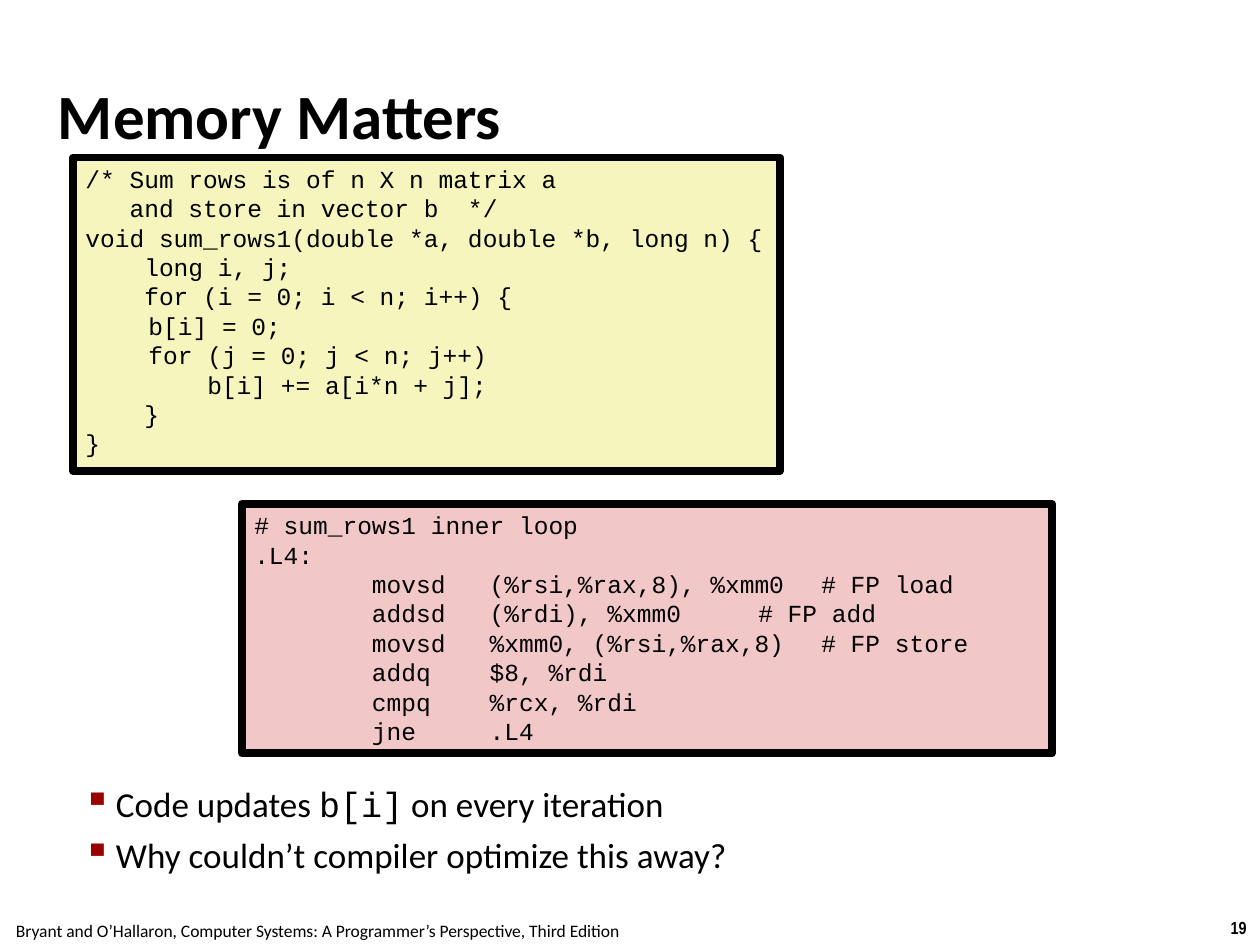
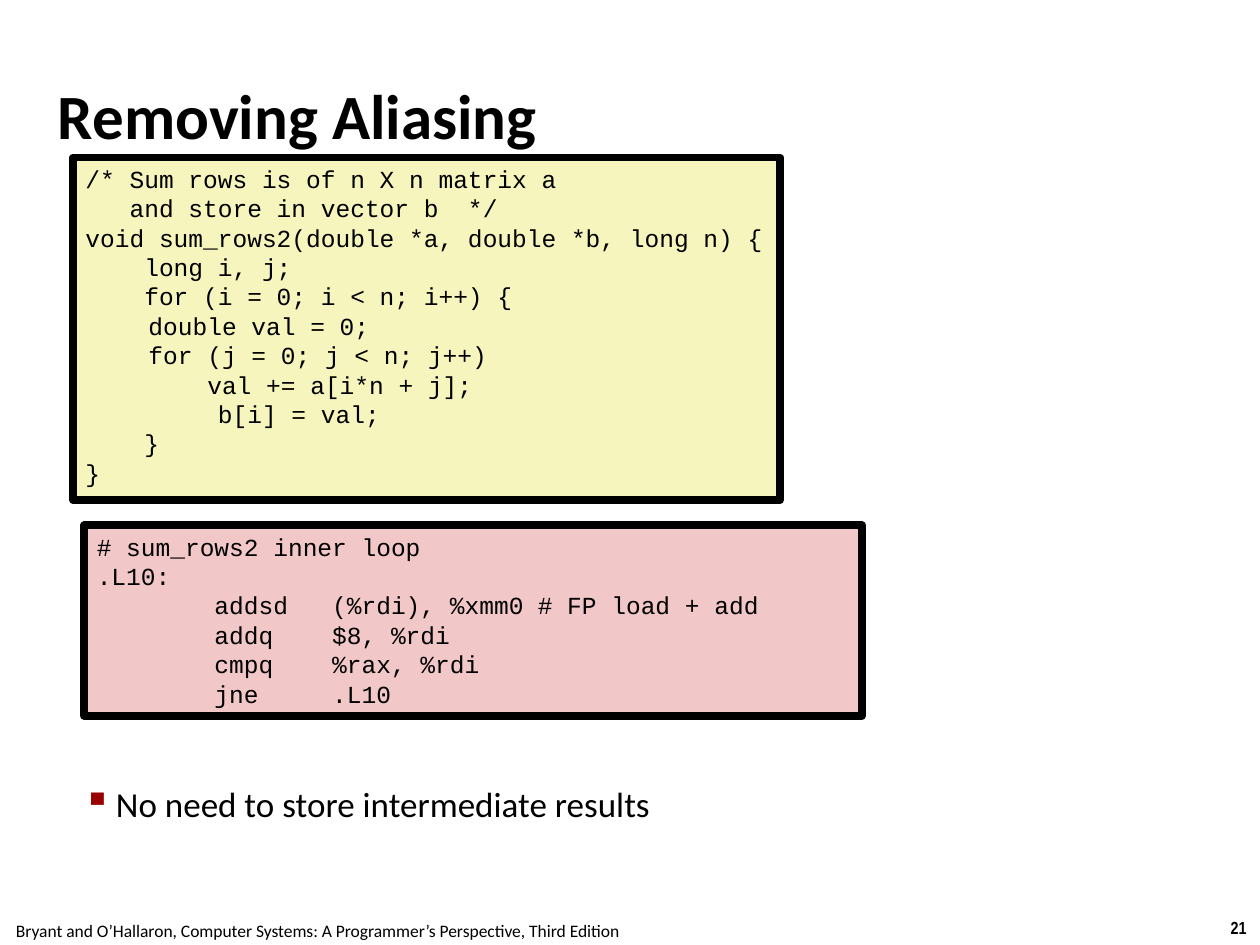
"""Two slides on memory references and aliasing in C code."""
from lxml import etree
from pptx import Presentation
from pptx.dml.color import RGBColor
from pptx.enum import shapes, text
from pptx.oxml.ns import qn
from pptx.util import Inches, Pt

BLACK, BULLET = "000000", "990000"
C_FILL, ASM_FILL = "F6F5BD", "F1C7C7"
BODY, CODE, NUMBER = "Calibri", "Courier New", "Arial Narrow"
FOOTER = "Bryant and O’Hallaron, Computer Systems: A Programmer’s Perspective, Third Edition"


def color(value):
    return RGBColor.from_string(value)


def write(shape, lines, font, size, bold=False, align=text.PP_ALIGN.LEFT,
          anchor=text.MSO_ANCHOR.TOP, inset=None, wrap=True, bullets=False):
    """Fill a shape with paragraphs; a line is a list of (words, font) runs or a string."""
    frame = shape.text_frame
    frame.word_wrap = wrap
    frame.vertical_anchor = anchor
    if inset is not None:
        frame.margin_left = frame.margin_right = Inches(inset)
        frame.margin_top = frame.margin_bottom = Inches(inset)
    for i, line in enumerate(lines):
        paragraph = frame.paragraphs[0] if i == 0 else frame.add_paragraph()
        paragraph.alignment = align
        if bullets:
            props = paragraph._p.get_or_add_pPr()
            props.set("marL", str(Inches(0.56)))
            props.set("indent", str(Inches(-0.26)))
            tint = etree.SubElement(props, qn("a:buClr"))
            etree.SubElement(tint, qn("a:srgbClr"), val=BULLET)
            etree.SubElement(props, qn("a:buSzPct"), val="110000")
            etree.SubElement(props, qn("a:buChar"), char="▪")
            if i:
                paragraph.space_before = Pt(5)
        paragraph.font.size = Pt(size)
        paragraph.font.bold = bold
        paragraph.font.color.rgb = color(BLACK)
        if isinstance(line, str):
            paragraph.font.name = font
            paragraph.add_run().text = line
        else:
            for words, run_font in line:
                run = paragraph.add_run()
                run.text = words
                run.font.name = run_font


lessons = [
    {
        "title": "Memory Matters",
        "number": "19",
        "points": [
            [("Code updates ", BODY), ("b[i]", CODE), (" on every iteration", BODY)],
            "Why couldn’t compiler optimize this away?",
        ],
        "function": "sum_rows1",
        "loop_body": [
            "\tb[i] = 0;",
            "\tfor (j = 0; j < n; j++)",
            "\t    b[i] += a[i*n + j];",
        ],
        "c_height": 2.49,
        "assembly": [
            ".L4:",
            "        movsd   (%rsi,%rax,8), %xmm0\t# FP load",
            "        addsd   (%rdi), %xmm0\t\t# FP add",
            "        movsd   %xmm0, (%rsi,%rax,8)\t# FP store",
            "        addq    $8, %rdi",
            "        cmpq    %rcx, %rdi",
            "        jne     .L4",
        ],
        "assembly_box": (1.92, 4, 6.43, 1.98),
    },
    {
        "title": "Removing Aliasing",
        "number": "21",
        "points": ["No need to store intermediate results"],
        "function": "sum_rows2",
        "loop_body": [
            "\tdouble val = 0;",
            "\tfor (j = 0; j < n; j++)",
            "\t    val += a[i*n + j];",
            "         b[i] = val;",
        ],
        "c_height": 2.72,
        "assembly": [
            ".L10:",
            "        addsd   (%rdi), %xmm0\t# FP load + add",
            "        addq    $8, %rdi",
            "        cmpq    %rax, %rdi",
            "        jne     .L10",
        ],
        "assembly_box": (0.67, 4.17, 6.17, 1.51),
    },
]

deck = Presentation()
deck.slide_width, deck.slide_height = Inches(10), Inches(7.5)

for lesson in lessons:
    slide = deck.slides.add_slide(deck.slide_layouts[6])

    number = slide.shapes.add_textbox(Inches(9.66), Inches(7.23), Inches(0.34), Inches(0.27))
    write(number, [lesson["number"]], NUMBER, 10, bold=True,
          align=text.PP_ALIGN.CENTER, wrap=False)
    footer = slide.shapes.add_textbox(Inches(-0.02), Inches(7.25), Inches(5.08), Inches(0.27))
    write(footer, [FOOTER], BODY, 10, align=text.PP_ALIGN.CENTER, wrap=False)

    title = slide.shapes.add_textbox(Inches(0.42), Inches(0.28), Inches(9.17), Inches(1.25))
    write(title, [lesson["title"]], BODY, 36, bold=True,
          anchor=text.MSO_ANCHOR.MIDDLE, inset=0.04)
    points = slide.shapes.add_textbox(Inches(0.32), Inches(6.17), Inches(9.09), Inches(0.88))
    write(points, lesson["points"], BODY, 20, inset=0.04, bullets=True)

    c_source = [
        "/* Sum rows is of n X n matrix a",
        "   and store in vector b  */",
        f"void {lesson['function']}(double *a, double *b, long n) {{",
        "    long i, j;",
        "    for (i = 0; i < n; i++) {",
        *lesson["loop_body"],
        "    }",
        "}",
    ]
    assembly = [f"# {lesson['function']} inner loop", *lesson["assembly"]]
    listings = [
        (assembly, lesson["assembly_box"], ASM_FILL),
        (c_source, (0.58, 1.25, 5.61, lesson["c_height"]), C_FILL),
    ]
    for code, box, fill in listings:
        listing = slide.shapes.add_shape(shapes.MSO_SHAPE.RECTANGLE, *map(Inches, box))
        listing.shadow.inherit = False
        listing.fill.solid()
        listing.fill.fore_color.rgb = color(fill)
        listing.line.color.rgb = color(BLACK)
        listing.line.width = Pt(4.5)
        write(listing, code, CODE, 14)

deck.save("out.pptx")
